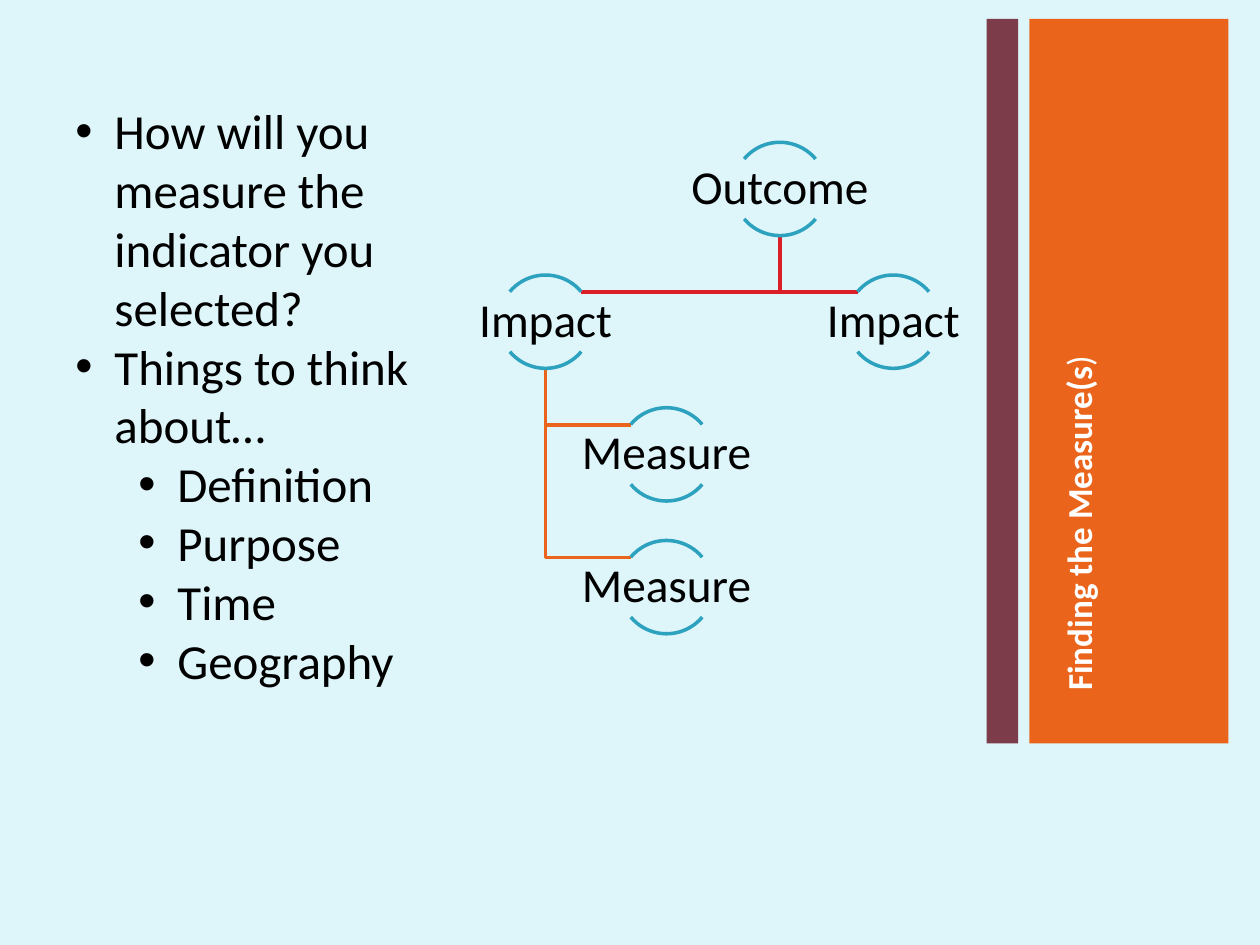
from collections import namedtuple

from lxml import etree
from pptx import Presentation
from pptx import util as u
from pptx.dml.color import RGBColor
from pptx.enum import shapes, text
from pptx.oxml import ns

BACKGROUND = RGBColor(0xDE, 0xF5, 0xFA)
PLUM = RGBColor(0x7D, 0x3C, 0x4A)
ORANGE = RGBColor(0xEB, 0x64, 0x1B)
RED = RGBColor(0xDA, 0x1F, 0x28)
TEAL = RGBColor(0x2D, 0xA2, 0xBF)
BLACK = RGBColor(0, 0, 0)
WHITE = RGBColor(0xFF, 0xFF, 0xFF)

FONT = "Calibri"
UNIT = u.Inches(1)  # side of one square grid cell
COLUMNS, ROWS = 10, 7.5

Box = namedtuple("Box", "left top width height")

BULLETS = [
    ("How will you measure the indicator you selected?", 0),
    ("Things to think about…", 0),
    ("Definition", 1),
    ("Purpose", 1),
    ("Time", 1),
    ("Geography", 1),
]

# Tree nodes: label, centre column within the tree, row
NODES = {
    "outcome": ("Outcome", 2.6, 0),
    "left impact": ("Impact", 0.74, 1),
    "first measure": ("Measure", 1.7, 2),
    "second measure": ("Measure", 1.7, 3),
    "right impact": ("Impact", 3.5, 1),
}
BRANCHES = [
    ("outcome", "right impact", RED),
    ("left impact", "second measure", ORANGE),
    ("left impact", "first measure", ORANGE),
    ("outcome", "left impact", RED),
]
TREE_ROWS = 4
CIRCLE = 0.74
LABEL_WIDTH, LABEL_HEIGHT = 2 * CIRCLE, 0.47
ARC_TIP = 0.28  # from the circle's centre line to an arc's end
ARCS = [(132, 192), (24, 84)]  # upper and lower caps


def emu(cells):
    return round(cells * UNIT)


def place(box):
    return [emu(cells) for cells in box]


def add_text_box(parent, box):
    shape = parent.add_textbox(*place(box))
    shape.text_frame.word_wrap = True
    return shape


def write(para, words, size, color=BLACK, bold=False):
    span = para.add_run()
    span.text = words
    font = span.font
    font.name, font.size, font.bold = FONT, u.Pt(size), bold
    font.color.rgb = color
    return span


def add_bullet(para, indent, hang):
    props = para._p.get_or_add_pPr()
    props.set("marL", str(emu(indent)))
    props.set("indent", str(-emu(hang)))
    etree.SubElement(props, ns.qn("a:buFont"), typeface="Arial")
    etree.SubElement(props, ns.qn("a:buChar"), char="•")


def draw_bar(page, box, color):
    bar = page.shapes.add_shape(shapes.MSO_SHAPE.RECTANGLE, *place(box))
    bar.shadow.inherit = False
    bar.fill.solid()
    bar.fill.fore_color.rgb = color
    bar.line.fill.background()


def draw_sidebar(page, box):
    stripe, gap = 0.25, 0.09
    draw_bar(page, box._replace(width=stripe), PLUM)
    panel = box._replace(left=box.left + stripe + gap,
                         width=box.width - stripe - gap)
    draw_bar(page, panel, ORANGE)

    # The title reads upwards, so its box is laid out flat and then turned.
    length, depth = 3, 1.08
    center_x = panel.left + 0.71
    center_y = box.top + box.height - 0.32 - length / 2
    title = add_text_box(page.shapes, Box(center_x - length / 2,
                                          center_y - depth / 2, length, depth))
    title.rotation = 270
    para = title.text_frame.paragraphs[0]
    write(para, "Finding the Measure(s", 20, WHITE, bold=True)
    write(para, ")", 20, WHITE)


def draw_bullets(page, box):
    frame = add_text_box(page.shapes, box).text_frame
    frame.auto_size = text.MSO_AUTO_SIZE.SHAPE_TO_FIT_TEXT
    for index, (words, level) in enumerate(BULLETS):
        para = frame.add_paragraph() if index else frame.paragraphs[0]
        para.level = level
        add_bullet(para, indent=0.31 + 0.5 * level, hang=0.31)
        write(para, words, 28)


def node_circle(box, name):
    _, column, row = NODES[name]
    pitch = (box.height - CIRCLE) / (TREE_ROWS - 1)
    return Box(box.left + column - CIRCLE / 2, box.top + row * pitch,
               CIRCLE, CIRCLE)


def draw_branch(group, parent, child, color):
    """Draw an elbow from below the parent to the nearest tip of the child."""
    start_x = parent.left + CIRCLE / 2
    child_x = child.left + CIRCLE / 2
    end_x = child_x + (ARC_TIP if child_x < start_x else -ARC_TIP)
    end_y = child.top + (CIRCLE - LABEL_HEIGHT) / 2
    builder = group.shapes.build_freeform(emu(start_x),
                                          emu(parent.top + CIRCLE))
    builder.add_line_segments([(emu(start_x), emu(end_y)),
                               (emu(end_x), emu(end_y))], close=False)
    elbow = builder.convert_to_shape()
    elbow.shadow.inherit = False
    elbow.fill.background()
    elbow.line.color.rgb = color
    elbow.line.width = u.Pt(2)


def draw_node(group, circle, label):
    for angles in ARCS:
        arc = group.shapes.add_shape(shapes.MSO_SHAPE.ARC, *place(circle))
        arc.adjustments[0], arc.adjustments[1] = angles
        arc.shadow.inherit = False
        arc.fill.background()
        arc.line.color.rgb = TEAL
        arc.line.width = u.Pt(2)
    frame = add_text_box(group.shapes, Box(
        circle.left - (LABEL_WIDTH - CIRCLE) / 2,
        circle.top + (CIRCLE - LABEL_HEIGHT) / 2,
        LABEL_WIDTH, LABEL_HEIGHT)).text_frame
    frame.margin_left = frame.margin_right = emu(0.02)
    frame.margin_top = frame.margin_bottom = emu(0.02)
    frame.vertical_anchor = text.MSO_ANCHOR.MIDDLE
    para = frame.paragraphs[0]
    para.alignment = text.PP_ALIGN.CENTER
    para.line_spacing = 0.9
    write(para, label, 27)


def draw_tree(page, box):
    group = page.shapes.add_group_shape()
    circles = {name: node_circle(box, name) for name in NODES}
    for parent, child, color in BRANCHES:
        draw_branch(group, circles[parent], circles[child], color)
    for name, circle in circles.items():
        draw_node(group, circle, NODES[name][0])


def main():
    deck = Presentation()
    deck.slide_width, deck.slide_height = emu(COLUMNS), emu(ROWS)
    page = deck.slides.add_slide(deck.slide_layouts[6])
    page.background.fill.solid()
    page.background.fill.fore_color.rgb = BACKGROUND
    draw_sidebar(page, Box(7.83, 0.15, 1.92, 5.75))
    draw_bullets(page, Box(0.5, 0.75, 3.42, 4.81))
    draw_tree(page, Box(3.59, 1.13, 4.24, 3.9))
    deck.save("out.pptx")


if __name__ == "__main__":
    main()
